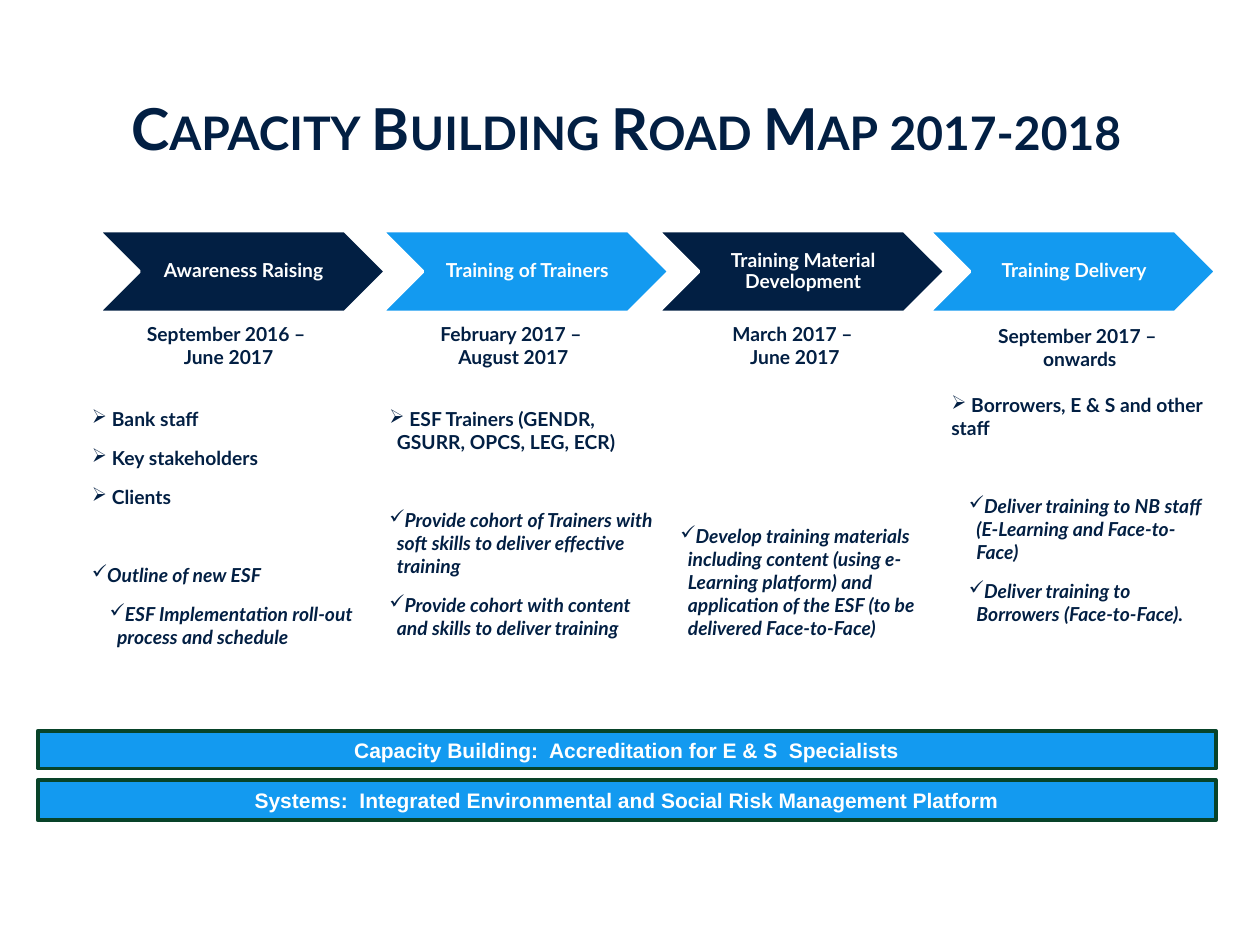
from dataclasses import dataclass

from lxml.etree import SubElement
from pptx import Presentation
from pptx.dml.color import RGBColor
from pptx.enum.shapes import MSO_SHAPE
from pptx.enum.text import MSO_ANCHOR, MSO_AUTO_SIZE, PP_ALIGN
from pptx.oxml.ns import qn
from pptx.util import Inches, Pt

NAVY, BLUE, GREEN, WHITE = "021F43", "139AF0", "084329", "FFFFFF"
ARROW, CHECK = "➢", "✓"
LINE = 13.2  # height of one 11 pt line, in points
AFTER = 9
GAP = LINE + AFTER


@dataclass
class Item:
    bullet: str
    text: str
    margin: float = 0.2
    before: float = 0


# Chevron left, fill, label, (text left, top, width), dates, items
PHASES = [
    (0.78, NAVY, "Awareness Raising", (0.73, 2.56, 2.17),
     ("September 2016 – ", "June 2017"),
     [Item(ARROW, " Bank staff", 0, GAP),
      Item(ARROW, " Key stakeholders", 0),
      Item(ARROW, " Clients", 0),
      Item(CHECK, "Outline of new ESF", 0, GAP),
      Item(CHECK, "ESF Implementation roll-out process and schedule")]),
    (3.03, BLUE, "Training of Trainers", (2.95, 2.56, 2.25),
     ("February 2017 – ", "August 2017"),
     [Item(ARROW, " ESF Trainers (GENDR, GSURR, OPCS, LEG, ECR)", before=GAP),
      Item(CHECK, "Provide cohort of Trainers with soft skills to deliver "
                  "effective training", before=GAP),
      Item(CHECK, "Provide cohort with content and skills to deliver training")]),
    (5.22, NAVY, "Training Material Development", (5.26, 2.56, 2.1),
     ("March 2017 – ", "June 2017"),
     [Item(CHECK, "Develop training materials including content (using "
                  "e-Learning platform) and application of the ESF (to be "
                  "delivered Face-to-Face)", before=4 * GAP)]),
    (7.37, BLUE, "Training Delivery", (7.55, 2.57, 2.04),
     ("September 2017 – ", "onwards"),
     [Item(ARROW, " Borrowers, E & S and other staff", 0, LINE),
      Item(CHECK, "Deliver training to NB staff (E-Learning and Face-to-Face)",
           before=GAP),
      Item(CHECK, "Deliver training to Borrowers (Face-to-Face).")]),
]

BARS = [
    (5.8, 0.3, "Capacity Building:  Accreditation for E & S  Specialists"),
    (6.19, 0.32, "Systems:  Integrated Environmental and Social Risk "
                 "Management Platform"),
]


def color(value):
    return RGBColor.from_string(value)


def format_runs(paragraph, size, font_name, hex_color, italic=False):
    for run in paragraph.runs:
        font = run.font
        font.size, font.name = Pt(size), font_name
        font.bold, font.italic = True, italic
        font.color.rgb = color(hex_color)


def set_margins(text_frame, left, top, right, bottom):
    text_frame.margin_left, text_frame.margin_top = Inches(left), Inches(top)
    text_frame.margin_right, text_frame.margin_bottom = Inches(right), Inches(bottom)


def add_bullet(paragraph, character, margin):
    properties = paragraph._p.get_or_add_pPr()
    properties.set("marL", str(Inches(margin)))
    properties.set("indent", str(Inches(-0.06)))
    SubElement(properties, qn("a:buChar")).set("char", character)


def add_labelled_shape(slide, kind, box, fill, line, text, size, font_name):
    shape = slide.shapes.add_shape(kind, *map(Inches, box))
    shape.shadow.inherit = False
    shape.fill.solid()
    shape.fill.fore_color.rgb = color(fill)
    shape.line.color.rgb = color(line)
    shape.line.width = Pt(2)
    text_frame = shape.text_frame
    text_frame.text = text
    text_frame.word_wrap = True
    text_frame.vertical_anchor = MSO_ANCHOR.MIDDLE
    paragraph = text_frame.paragraphs[0]
    paragraph.alignment = PP_ALIGN.CENTER
    format_runs(paragraph, size, font_name, WHITE)
    return shape


def add_title(slide, box, text):
    title = slide.shapes.title
    title.left, title.top, title.width, title.height = map(Inches, box)
    text_frame = title.text_frame
    text_frame.text = text
    text_frame.auto_size = MSO_AUTO_SIZE.NONE
    text_frame.vertical_anchor = MSO_ANCHOR.TOP
    paragraph = text_frame.paragraphs[0]
    paragraph.alignment = PP_ALIGN.CENTER
    paragraph.line_spacing = 0.9
    format_runs(paragraph, 33, "Lato", NAVY)
    paragraph.runs[0].font._element.set("cap", "small")


def add_chevron(slide, box, fill, label):
    chevron = add_labelled_shape(slide, MSO_SHAPE.CHEVRON, box, fill, WHITE,
                                 label, 11, "Lato")
    set_margins(chevron.text_frame, 0.05, 0.02, 0.02, 0.02)
    chevron.text_frame.paragraphs[0].line_spacing = 0.9


def add_phase_details(slide, box, dates, items):
    """Place the centred dates and, below them, the bulleted items."""
    text_frame = slide.shapes.add_textbox(*map(Inches, box)).text_frame
    text_frame.word_wrap = True
    set_margins(text_frame, 0, 0, 0, 0)
    text_frame.text = "\n".join([*dates, *(item.text for item in items)])
    paragraphs = text_frame.paragraphs
    for paragraph in paragraphs[:len(dates)]:
        paragraph.alignment = PP_ALIGN.CENTER
        format_runs(paragraph, 11, "Lato", NAVY)
    for paragraph, item in zip(paragraphs[len(dates):], items):
        paragraph.space_before = Pt(item.before)
        paragraph.space_after = Pt(AFTER)
        add_bullet(paragraph, item.bullet, item.margin)
        format_runs(paragraph, 11, "Lato", NAVY, italic=item.bullet == CHECK)


def main():
    presentation = Presentation()
    presentation.slide_width, presentation.slide_height = Inches(10), Inches(7.5)
    slide = presentation.slides.add_slide(presentation.slide_layouts[5])
    add_title(slide, (0.66, 0.75, 8.62, 0.68), "Capacity Building Road Map 2017-2018")
    for left, fill, label, details, dates, items in PHASES:
        add_chevron(slide, (left, 1.83, 2.28, 0.65), fill, label)
        add_phase_details(slide, (*details, 3.14), dates, items)
    for top, height, text in BARS:
        add_labelled_shape(slide, MSO_SHAPE.RECTANGLE, (0.3, top, 9.35, height),
                           BLUE, GREEN, text, 12, "Arial")
    presentation.save("out.pptx")


if __name__ == "__main__":
    main()
